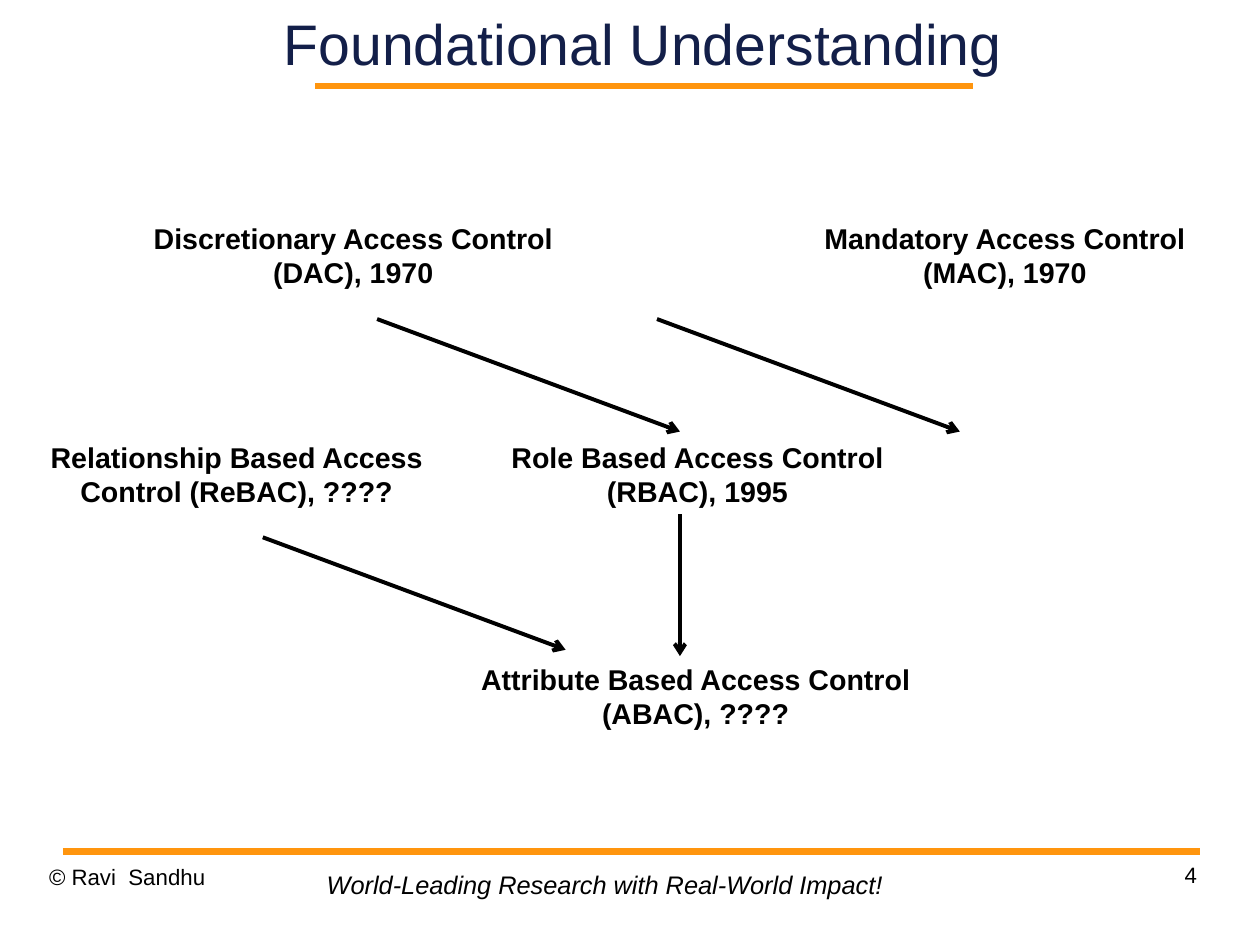
from lxml import etree
from pptx import Presentation
from pptx.dml.color import RGBColor
from pptx.enum.shapes import MSO_CONNECTOR
from pptx.enum.text import MSO_ANCHOR, MSO_AUTO_SIZE, PP_ALIGN
from pptx.oxml.ns import qn
from pptx.util import Cm, Pt

LEFT, CENTER, RIGHT = PP_ALIGN.LEFT, PP_ALIGN.CENTER, PP_ALIGN.RIGHT
TOP, MIDDLE = MSO_ANCHOR.TOP, MSO_ANCHOR.MIDDLE
NO_FIT = MSO_AUTO_SIZE.NONE
STRAIGHT = MSO_CONNECTOR.STRAIGHT
BLACK, NAVY, ORANGE = "000000", "131F49", "FF950E"

# Content, lengths in cm
TITLE = "Foundational Understanding"
COPYRIGHT = "© Ravi  Sandhu"
PAGE = "4"
TAGLINE = "World-Leading Research with Real-World Impact!"
ROW_1, ROW_2, ROW_3 = 4.78, 9.65, 14.58
MODELS = [  # text, left, top, width
    ("Discretionary Access Control (DAC), 1970", 3.15, ROW_1, 9.4),
    ("Mandatory Access Control (MAC), 1970", 17.63, ROW_1, 9.4),
    ("Relationship Based Access Control (ReBAC), ????", 0.56, ROW_2, 9.4),
    ("Role Based Access Control (RBAC), 1995", 10.8, ROW_2, 9.4),
    ("Attribute Based Access Control (ABAC), ????", 10.24, ROW_3, 10.44),
]
MODEL_HEIGHT = 1.8
SLANT = (6.73, 2.5)
ARROWS = [  # start x, start y, (run, drop)
    (8.38, 7.09, SLANT),
    (14.6, 7.09, SLANT),
    (5.84, 11.94, SLANT),
    (15.11, 11.43, (0, 3.15)),
]
RULES = [(7.01, 21.62, 1.91), (1.4, 26.67, 18.92)]  # from x, to x, y


def rgb(color):
    return RGBColor.from_string(color)


def write(sp, text, size, color=BLACK, align=LEFT, anchor=TOP, margins=(0, 0),
          bold=False, italic=False, wrap=True, spacing=1.0):
    tf = sp.text_frame
    tf.text = text
    tf.word_wrap = wrap
    tf.auto_size = NO_FIT
    tf.vertical_anchor = anchor
    tf.margin_left = tf.margin_right = Cm(margins[0])
    tf.margin_top = tf.margin_bottom = Cm(margins[1])
    p = tf.paragraphs[0]
    p.alignment = align
    p.line_spacing = spacing
    font = p.runs[0].font
    font.name, font.size, font.bold, font.italic = "Arial", Pt(size), bold, italic
    font.color.rgb = rgb(color)


def add_text(left, top, width, height, text, size, **style):
    sp = s.shapes.add_textbox(Cm(left), Cm(top), Cm(width), Cm(height))
    write(sp, text, size, **style)


def add_line(x1, y1, x2, y2, color, weight, arrow=False):
    line = s.shapes.add_connector(STRAIGHT, Cm(x1), Cm(y1), Cm(x2), Cm(y2))
    line.line.color.rgb = rgb(color)
    line.line.width = Pt(weight)
    if arrow:
        etree.SubElement(line.line._get_or_add_ln(), qn("a:tailEnd"), type="arrow")
    etree.SubElement(line._element.spPr, qn("a:effectLst"))


prs = Presentation()
prs.slide_width, prs.slide_height = Cm(28), Cm(21)
s = prs.slides.add_slide(prs.slide_layouts[5])

# Orange rules under the title and above the footer
for x1, x2, y in RULES:
    add_line(x1, y, x2, y, ORANGE, 4.31)

# Title
title = s.shapes.title
title.left, title.top, title.width, title.height = Cm(6.12), Cm(0), Cm(16.33), Cm(1.9)
write(title, TITLE, 36, color=NAVY, align=CENTER, anchor=MIDDLE)

# Footer
add_text(1.09, 19.18, 6.53, 1.45, COPYRIGHT, 14, spacing=1.01)
add_text(20.07, 19.13, 6.53, 1.45, PAGE, 14, align=RIGHT, spacing=1.01)
add_text(7.01, 19.18, 12.9, 0.94, TAGLINE, 16, italic=True, wrap=False,
         margins=(0.25, 0.13))

# Access control models
for text, left, top, width in MODELS:
    add_text(left, top, width, MODEL_HEIGHT, text, 18, align=CENTER, bold=True,
             margins=(0.25, 0.13))

# Arrows between the models
for x, y, (run, drop) in ARROWS:
    add_line(x, y, x + run, y + drop, BLACK, 2.5, arrow=True)

prs.save("out.pptx")
